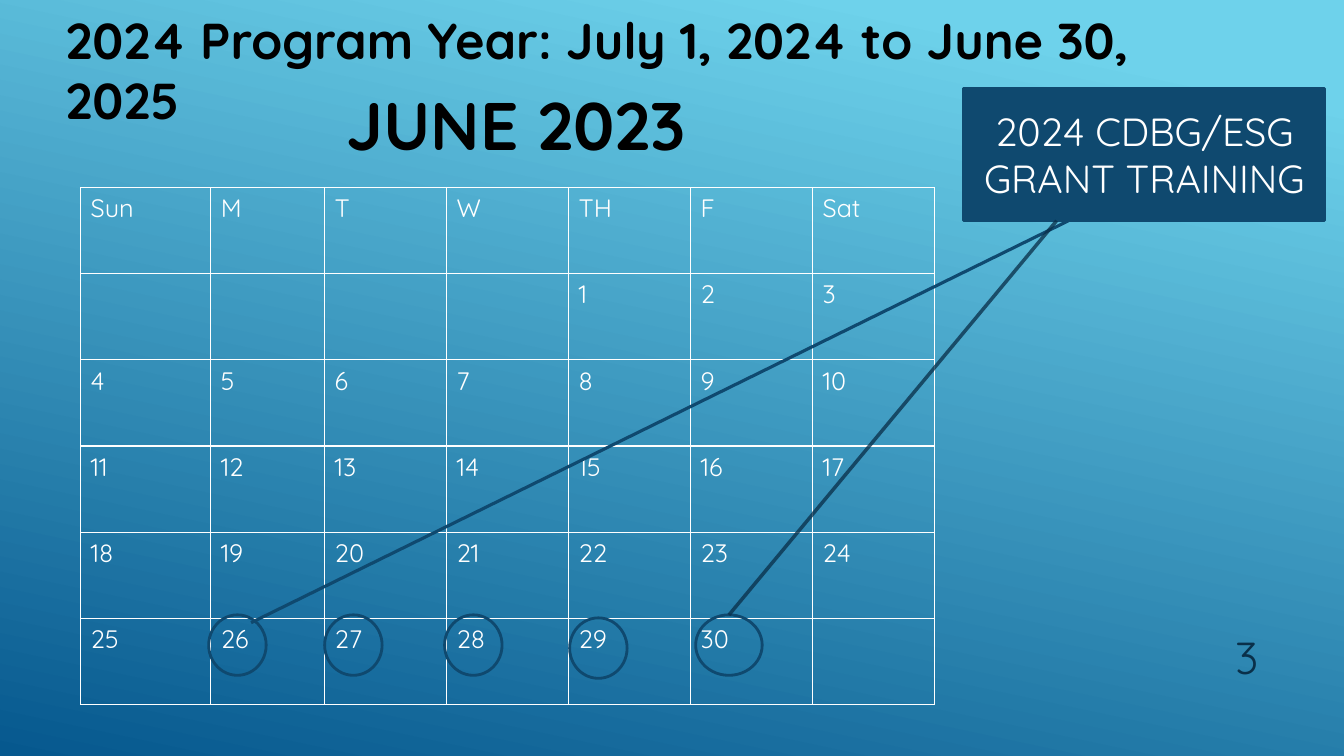
"""Build the June 2023 calendar slide with its training callout."""
from dataclasses import dataclass

from lxml.etree import SubElement
from pptx import Presentation
from pptx.dml.color import RGBColor
from pptx.enum.shapes import MSO_CONNECTOR, MSO_SHAPE
from pptx.enum.text import MSO_ANCHOR, MSO_AUTO_SIZE, PP_ALIGN
from pptx.oxml.ns import qn
from pptx.util import Inches, Pt

FONT = "Quicksand"
NAVY, DARK, WHITE, BLACK = "0F496F", "0A304A", "FFFFFF", "000000"
DAYS = ["Sun", "M", "T", "W", "TH", "F", "Sat"]
WIDTHS = [1.29, 1.13] + [1.21] * 5
ROWS, LAST, SHIFT = 6, 30, 10


@dataclass
class Label:
    text: str
    left: float
    top: float
    width: float
    height: float
    size: float
    color: str
    align: PP_ALIGN
    bold: bool = False
    anchor: MSO_ANCHOR = MSO_ANCHOR.TOP
    grow: bool = False


@dataclass
class Ring:
    left: float
    top: float = 6.1
    width: float = 0.57
    height: float = 0.6


LABELS = [
    Label("JUNE 2023", 3.1, 0.78, 4.04, 0.91, 48, BLACK, PP_ALIGN.CENTER, bold=True, grow=True),
    Label("3", 11.33, 6.1, 1.25, 0.73, 32, DARK, PP_ALIGN.RIGHT, anchor=MSO_ANCHOR.BOTTOM),
    Label("2024 Program Year: July 1, 2024 to June 30, 2025", 0.55, 0.04, 11.88, 0.71,
          36, BLACK, PP_ALIGN.LEFT, bold=True, grow=True),
]
RINGS = [Ring(2.07), Ring(3.22), Ring(4.41), Ring(5.65, top=6.13), Ring(6.9, width=0.66)]


def rgb(code: str) -> RGBColor:
    return RGBColor.from_string(code)


def style(frame, size: float, color: str, bold: bool = False, align=None) -> None:
    for para in frame.paragraphs:
        para.alignment = align
        for run in para.runs:
            run.font.name = FONT
            run.font.size = Pt(size)
            run.font.bold = bold
            run.font.color.rgb = rgb(color)


def paint(slide) -> None:
    fill = slide.background.fill
    fill.gradient()
    fill.gradient_angle = 258
    for stop, (place, color) in zip(fill.gradient_stops, [(0.1, "6ED2EB"), (1, "06588E")]):
        stop.position = place
        stop.color.rgb = rgb(color)


def write(slide, label: Label) -> None:
    box = slide.shapes.add_textbox(Inches(label.left), Inches(label.top),
                                   Inches(label.width), Inches(label.height))
    frame = box.text_frame
    frame.word_wrap = True
    frame.auto_size = MSO_AUTO_SIZE.SHAPE_TO_FIT_TEXT if label.grow else MSO_AUTO_SIZE.NONE
    frame.vertical_anchor = label.anchor
    frame.text = label.text
    style(frame, label.size, label.color, label.bold, label.align)


def border(cell) -> None:
    props = cell._tc.get_or_add_tcPr()
    for side in ("lnL", "lnR", "lnT", "lnB"):
        line = SubElement(props, qn(f"a:{side}"), w=str(Pt(1)))
        fill = SubElement(line, qn("a:solidFill"))
        SubElement(fill, qn("a:srgbClr"), val=WHITE)


def cell_text(row: int, col: int) -> str:
    if row == 0:
        return DAYS[col]
    day = row * len(DAYS) + col - SHIFT
    return str(day) if 1 <= day <= LAST else ""


def draw_month(slide) -> None:
    table = slide.shapes.add_table(ROWS, len(DAYS), Inches(0.8), Inches(1.86),
                                   Inches(8.48), Inches(5.13)).table
    table.first_row = table.horz_banding = False
    for col, width in zip(table.columns, WIDTHS):
        col.width = Inches(width)
    for row in range(ROWS):
        for col in range(len(DAYS)):
            cell = table.cell(row, col)
            border(cell)
            cell.fill.background()
            cell.text_frame.text = cell_text(row, col)
            style(cell.text_frame, 18, WHITE)


def draw_callout(slide) -> None:
    note = slide.shapes.add_shape(MSO_SHAPE.LINE_CALLOUT_1, Inches(9.56), Inches(0.88),
                                  Inches(3.58), Inches(1.31))
    note.shadow.inherit = False
    for index, value in enumerate([1, 0.29, 4.045, -1.975]):
        note.adjustments[index] = value
    note.fill.solid()
    note.fill.fore_color.rgb = rgb(NAVY)
    note.line.color.rgb = rgb(NAVY)
    note.line.width = Pt(2.25)
    frame = note.text_frame
    frame.word_wrap = True
    frame.vertical_anchor = MSO_ANCHOR.MIDDLE
    frame.text = "2024 CDBG/ESG GRANT TRAINING"
    style(frame, 28, WHITE, align=PP_ALIGN.CENTER)


def draw_ring(slide, ring: Ring):
    shape = slide.shapes.add_shape(MSO_SHAPE.FLOWCHART_CONNECTOR, Inches(ring.left),
                                   Inches(ring.top), Inches(ring.width), Inches(ring.height))
    shape.shadow.inherit = False
    shape.fill.background()
    shape.line.color.rgb = rgb(NAVY)
    shape.line.width = Pt(2)
    return shape


def draw_link(slide, ring) -> None:
    link = slide.shapes.add_connector(MSO_CONNECTOR.STRAIGHT, Inches(7.23), Inches(6.1),
                                      Inches(10.48), Inches(2.19))
    link.begin_connect(ring, 0)
    link.line.color.rgb = rgb(DARK)
    link.line.width = Pt(2.5)
    props = link._element.spPr
    SubElement(props.find(".//" + qn("a:srgbClr")), qn("a:alpha"), val="76000")
    SubElement(props, qn("a:effectLst"))


def main() -> None:
    deck = Presentation()
    deck.slide_width, deck.slide_height = Inches(13.33), Inches(7.5)
    slide = deck.slides.add_slide(deck.slide_layouts[6])
    paint(slide)
    draw_month(slide)
    draw_callout(slide)
    for label in LABELS:
        write(slide, label)
    rings = [draw_ring(slide, ring) for ring in RINGS]
    draw_link(slide, rings[-1])
    deck.save("out.pptx")


if __name__ == "__main__":
    main()
